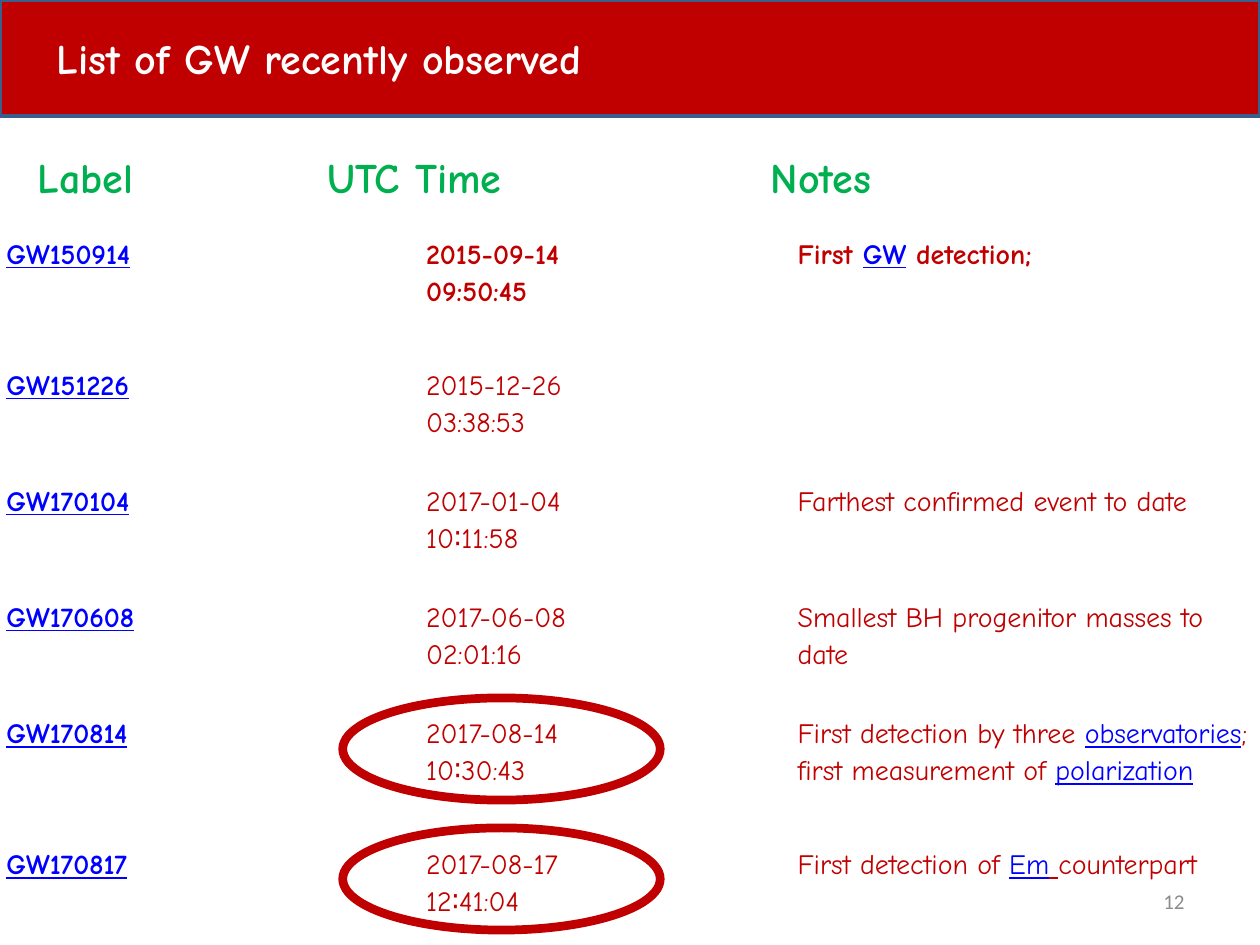
"""Build a slide that lists recently observed gravitational waves."""
from lxml.etree import SubElement
from pptx import Presentation
from pptx.dml.color import RGBColor
from pptx.enum.shapes import MSO_SHAPE
from pptx.enum.text import MSO_ANCHOR, PP_ALIGN
from pptx.oxml import parse_xml
from pptx.oxml.ns import nsdecls, qn
from pptx.util import Cm, Pt

COLORS = {"red": "C00000", "link": "0000FF", "green": "00B050",
          "white": "FFFFFF", "edge": "3A5F8C", "gray": "8C8C8C"}
FONT = "Comic Neue"
COLUMN_WIDTHS = [8.46, 7.49, 9.45]
ROW_HEIGHTS = [2.64, 2.34, 2.34, 2.34, 2.64, 3.56]
HEADING_TABS = [5.84, 14.78]
EVENTS = [
    ("GW150914", "2015-09-14\n09:50:45",
     [("First ", "plain"), ("GW", "link"), (" detection;", "plain")]),
    ("GW151226", "2015-12-26\n03:38:53", []),
    ("GW170104", "2017-01-04\n10∶11:58",
     [("Farthest confirmed event to date", "plain")]),
    ("GW170608", "2017-06-08\n02:01:16",
     [("Smallest BH progenitor masses to date", "plain")]),
    ("GW170814", "2017-08-14\n10∶30:43",
     [("First detection by three ", "plain"), ("observatories", "link"),
      ("; first measurement of ", "plain"), ("polarization", "link")]),
    ("GW170817", "2017-08-17\n12∶41:04",
     [("First detection of ", "plain"), ("Em", "link"),
      (" ", "underlined"), ("counterpart", "plain")]),
]


def rgb(name):
    """Return the named color."""
    return RGBColor.from_string(COLORS[name])


def add_run(paragraph, text, size, color, bold=False, underline=False, font=FONT):
    """Append styled text, turning newlines into line breaks."""
    for index, line in enumerate(text.split("\n")):
        if index:
            paragraph.add_line_break()
        run = paragraph.add_run()
        run.text = line
        run.font.name = font
        run.font.size = Pt(size)
        run.font.bold = bold
        run.font.underline = underline
        run.font.color.rgb = rgb(color)


def add_outlined_shape(slide, kind, box, line, width, fill=None):
    """Add a preset shape with an outline and an optional fill."""
    shape = slide.shapes.add_shape(kind, *map(Cm, box))
    shape.shadow.inherit = False
    if fill:
        shape.fill.solid()
        shape.fill.fore_color.rgb = rgb(fill)
    else:
        shape.fill.background()
    shape.line.color.rgb = rgb(line)
    shape.line.width = Pt(width)


def add_text(slide, box, text, size, color, bold=True, font=FONT):
    """Add a one-line text box and return its shape."""
    shape = slide.shapes.add_textbox(*map(Cm, box))
    shape.text_frame.word_wrap = True
    add_run(shape.text_frame.paragraphs[0], text, size, color, bold, font=font)
    return shape


def add_headings(slide):
    """Add the column headings, aligned by tab stops."""
    shape = add_text(slide, (0.51, 2.92, 24.41, 1.27),
                     "Label\tUTC Time\tNotes", 24, "green")
    properties = shape.text_frame.paragraphs[0]._p.get_or_add_pPr()
    tabs = SubElement(properties, qn("a:tabLst"))
    for position in HEADING_TABS:
        SubElement(tabs, qn("a:tab"), pos=str(Cm(position)), algn="l")


def set_borders(cell, bottom):
    """Give a cell white borders, with its own bottom width."""
    properties = cell._tc.get_or_add_tcPr()
    for index, (side, width) in enumerate(
            [("L", 1), ("R", 1), ("T", 1), ("B", bottom)]):
        properties.insert(index, parse_xml(
            f'<a:ln{side} {nsdecls("a")} w="{Pt(width)}"><a:solidFill>'
            f'<a:srgbClr val="{COLORS["white"]}"/></a:solidFill></a:ln{side}>'))


def fill_cell(cell, segments, bold, bottom):
    """Format a cell and write its text segments."""
    cell.fill.background()
    cell.margin_left = cell.margin_right = Cm(0.18)
    cell.margin_top = cell.margin_bottom = 0
    set_borders(cell, bottom)
    paragraph = cell.text_frame.paragraphs[0]
    paragraph.line_spacing = 1.15
    for text, style in segments:
        color = "link" if style == "link" else "red"
        add_run(paragraph, text, 16, color, bold, style != "plain")


def add_event_table(slide):
    """Add the table of events."""
    frame = slide.shapes.add_table(
        len(EVENTS), len(COLUMN_WIDTHS), Cm(-0.05), Cm(4.72),
        Cm(sum(COLUMN_WIDTHS)), Cm(sum(ROW_HEIGHTS)))
    table = frame.table
    table.first_row = table.horz_banding = False
    for column, width in zip(table.columns, COLUMN_WIDTHS):
        column.width = Cm(width)
    for row, height in zip(table.rows, ROW_HEIGHTS):
        row.height = Cm(height)
    for row_index, (label, time, notes) in enumerate(EVENTS):
        first = row_index == 0
        contents = [[(label, "link")], [(time, "plain")], notes]
        for column_index, segments in enumerate(contents):
            fill_cell(table.cell(row_index, column_index), segments,
                      first or column_index == 0, 3 if first else 1)


def add_page_number(slide):
    """Add the page number at the lower right."""
    shape = add_text(slide, (18.21, 17.65, 5.92, 1.02), "12", 12, "gray",
                     False, "Calibri")
    shape.text_frame.vertical_anchor = MSO_ANCHOR.MIDDLE
    shape.text_frame.paragraphs[0].alignment = PP_ALIGN.RIGHT


def main():
    """Build and save the presentation."""
    presentation = Presentation()
    presentation.slide_width = Cm(25.4)
    presentation.slide_height = Cm(19.05)
    slide = presentation.slides.add_slide(presentation.slide_layouts[6])
    add_outlined_shape(slide, MSO_SHAPE.RECTANGLE, (0, 0, 25.4, 2.34),
                       "edge", 2, "red")
    add_text(slide, (0.89, 0.53, 15.39, 1.27),
             "List of GW recently observed", 24, "white")
    add_event_table(slide)
    add_headings(slide)
    for top in (14.07, 16.69):
        add_outlined_shape(slide, MSO_SHAPE.OVAL, (6.91, top, 6.4, 2.06), "red", 5)
    add_page_number(slide)
    presentation.save("out.pptx")


if __name__ == "__main__":
    main()
